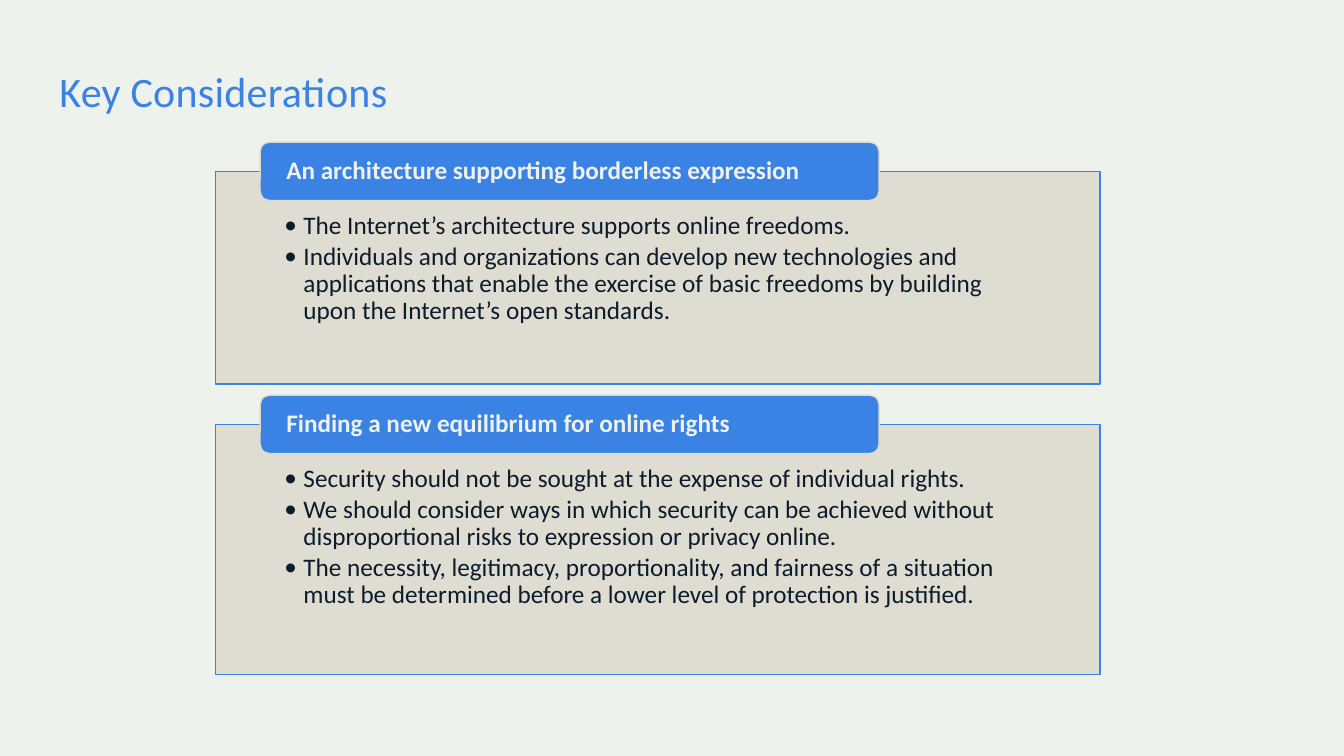
from lxml.etree import SubElement
from pptx import Presentation
from pptx.dml.color import RGBColor
from pptx.enum.shapes import MSO_SHAPE
from pptx.enum.text import MSO_ANCHOR, PP_ALIGN
from pptx.oxml.ns import qn
from pptx.util import Inches, Pt

COLORS = {"paper": "EEF2EC", "blue": "3A82E4", "sand": "DEDAD0", "ink": "0C1C2C"}
FONT = "Calibri"

# Panel top, panel height, heading, bullet points
TOPICS = [
    (1.7, 2.11, "An architecture supporting borderless expression", [
        "The Internet’s architecture supports online freedoms.",
        "Individuals and organizations can develop new technologies and applications "
        "that enable the exercise of basic freedoms by building upon the Internet’s "
        "open standards.",
    ]),
    (4.21, 2.48, "Finding a new equilibrium for online rights", [
        "Security should not be sought at the expense of individual rights.",
        "We should consider ways in which security can be achieved without "
        "disproportional risks to expression or privacy online.",
        "The necessity, legitimacy, proportionality, and fairness of a situation must "
        "be determined before a lower level of protection is justified.",
    ]),
]


def color(name):
    return RGBColor.from_string(COLORS[name])


def add_bullet(para, indent):
    properties = para._p.get_or_add_pPr()
    properties.set("marL", str(Inches(indent)))
    properties.set("indent", str(-Inches(indent)))
    SubElement(properties, qn("a:buFont"), typeface=FONT)
    SubElement(properties, qn("a:buChar"), char="•")


def write(box, lines, *, ink, size=18, bold=False, leading=0.9, after=0,
          insets=(0, 0, 0, 0), anchor=MSO_ANCHOR.TOP, indent=None, tracking=None):
    """Fill a box with one paragraph per line; an indent makes them bullets."""
    frame = box.text_frame
    frame.word_wrap = True
    frame.vertical_anchor = anchor
    (frame.margin_left, frame.margin_top,
     frame.margin_right, frame.margin_bottom) = map(Inches, insets)
    for index, line in enumerate(lines):
        para = frame.add_paragraph() if index else frame.paragraphs[0]
        para.alignment = PP_ALIGN.LEFT
        para.line_spacing = leading
        para.space_after = Pt(after)
        if indent:
            add_bullet(para, indent)
        span = para.add_run()
        span.text = line
        span.font.name = FONT
        span.font.size = Pt(size)
        span.font.bold = bold
        span.font.color.rgb = color(ink)
        if tracking:
            span.font._element.set("spc", str(round(tracking * 100)))


class SlideBuilder:
    def __init__(self, deck):
        self.slide = deck.slides.add_slide(deck.slide_layouts[6])
        self.slide.background.fill.solid()
        self.slide.background.fill.fore_color.rgb = color("paper")

    def text(self, left, top, width, height, lines, **style):
        box = self.slide.shapes.add_textbox(*map(Inches, (left, top, width, height)))
        write(box, lines, **style)

    def block(self, kind, left, top, width, height, fill, line, opacity=None):
        block = self.slide.shapes.add_shape(kind, *map(Inches, (left, top, width, height)))
        block.shadow.inherit = False
        block.fill.solid()
        block.fill.fore_color.rgb = color(fill)
        block.line.color.rgb = color(line)
        block.line.width = Pt(1)
        if opacity:
            tint = block._element.spPr.find(qn("a:solidFill"))[0]
            SubElement(tint, qn("a:alpha"), val=str(opacity * 1000))

    def topic(self, top, height, heading, points):
        """Draw a bulleted panel with a heading tab centred on its top edge."""
        self.block(MSO_SHAPE.RECTANGLE, 2.14, top, 8.77, height,
                   "sand", "blue", opacity=90)
        self.text(2.14, top, 8.77, height, points, ink="ink", after=2.7, indent=0.19,
                  insets=(0.68, 0.41, 0.68, 0.14))
        self.block(MSO_SHAPE.ROUNDED_RECTANGLE, 2.58, top - 0.29, 6.14, 0.58,
                   "blue", "sand")
        self.text(2.61, top - 0.26, 6.09, 0.52, [heading], ink="paper", bold=True,
                  insets=(0.23, 0, 0.23, 0), anchor=MSO_ANCHOR.MIDDLE)


def main():
    deck = Presentation()
    deck.slide_width, deck.slide_height = Inches(13.33), Inches(7.5)
    page = SlideBuilder(deck)
    page.text(0.59, 0.62, 12.16, 0.59, ["Key Considerations"],
              ink="blue", size=30, leading=1.06, tracking=0.2)
    for topic in TOPICS:
        page.topic(*topic)
    deck.save("out.pptx")


if __name__ == "__main__":
    main()
